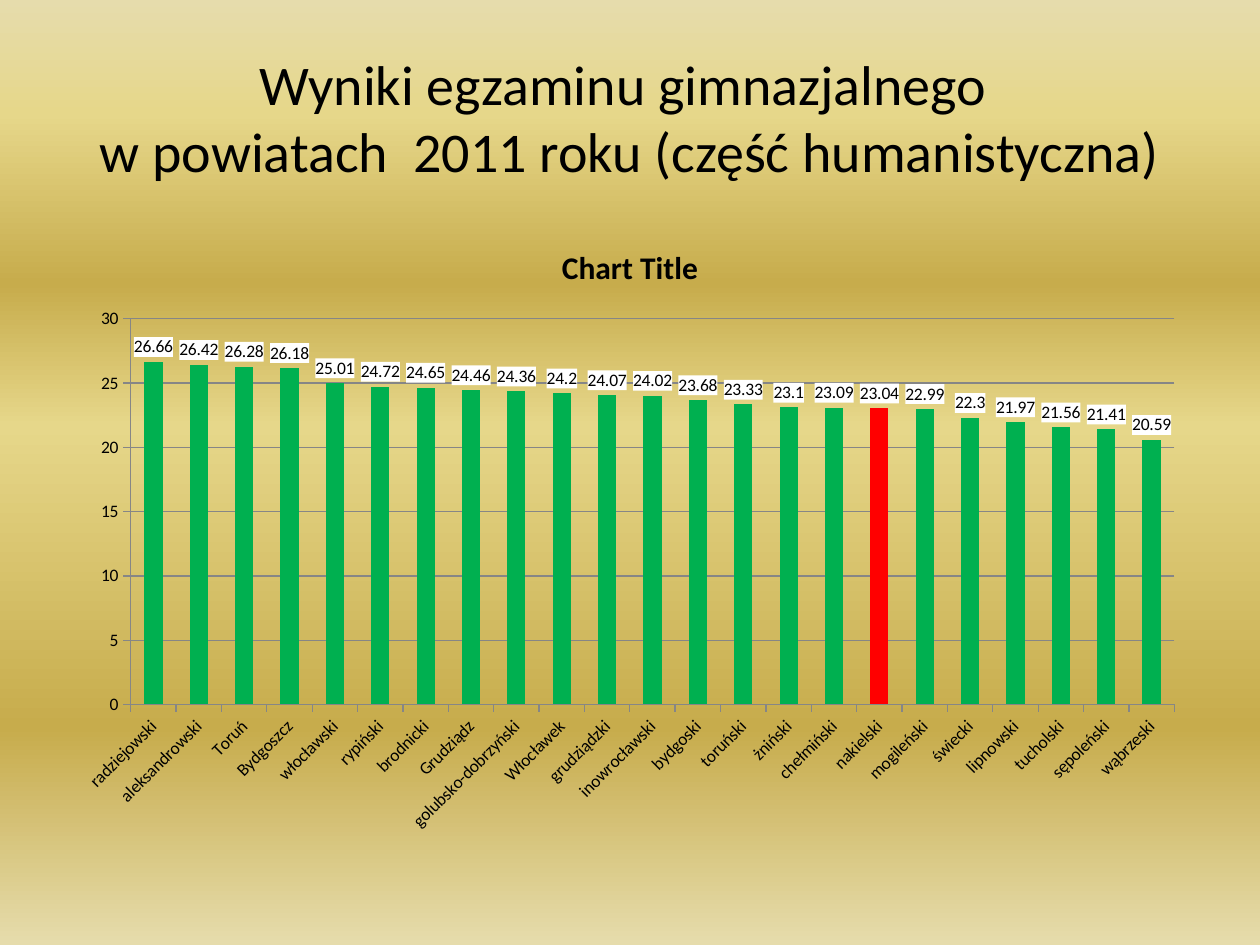
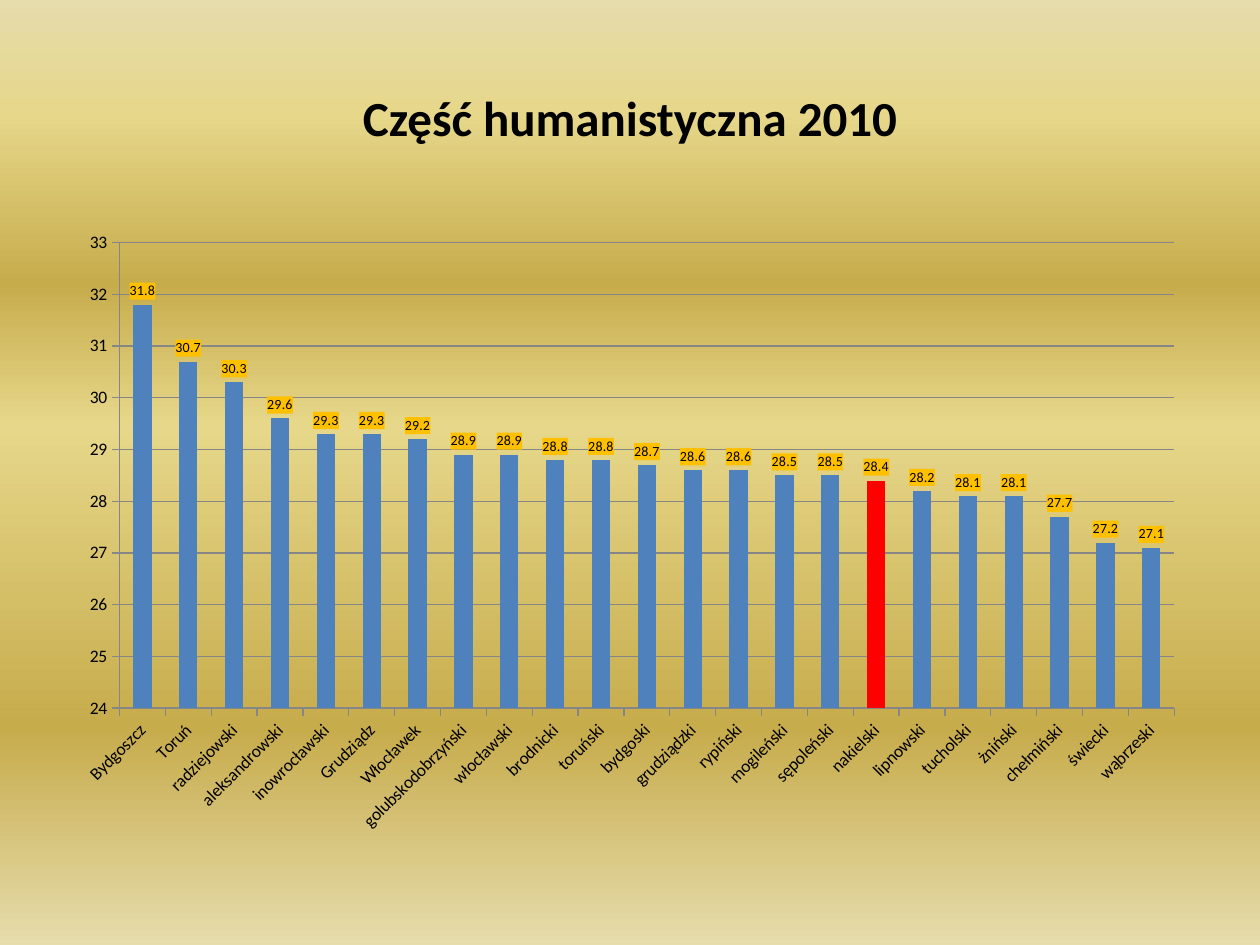
from dataclasses import dataclass
from typing import Optional

from lxml.etree import SubElement
from pptx import Presentation
from pptx.chart.chart import Chart
from pptx.chart.data import CategoryChartData
from pptx.dml.color import RGBColor
from pptx.enum.chart import XL_CHART_TYPE, XL_LABEL_POSITION, XL_TICK_LABEL_POSITION, XL_TICK_MARK
from pptx.enum.text import MSO_ANCHOR, PP_ALIGN
from pptx.oxml import parse_xml
from pptx.oxml.ns import nsdecls, qn
from pptx.presentation import Presentation as Deck
from pptx.slide import Slide
from pptx.util import Cm, Pt


@dataclass(frozen=True)
class Theme:
    font: str = "Calibri"
    text: str = "000000"
    grid: str = "868686"
    highlight: str = "FF0000"
    background: tuple = (
        (0, "E6DCAC"), (12, "E6D78A"), (30, "C7AC4C"),
        (45, "E6D78A"), (77, "C7AC4C"), (100, "E6DCAC"),
    )
    chart_title_size: int = 18
    axis_size: int = 10


@dataclass(frozen=True)
class ResultsPage:
    title: str
    title_size: int
    title_bold: bool
    chart_title: Optional[str]
    bar_color: str
    label_fill: str
    label_size: int
    axis_range: tuple[int, int]
    axis_step: int
    results: dict[str, float]


THEME = Theme()
HIGHLIGHTED_COUNTY = "nakielski"
LEFT, WIDTH = Cm(1.27), Cm(22.86)
TITLE_TOP, TITLE_HEIGHT = Cm(0.76), Cm(3.18)
CHART_TOP, CHART_HEIGHT = Cm(4.44), Cm(12.57)

PAGES = (
    ResultsPage(
        title="Wyniki egzaminu gimnazjalnego \vw powiatach  2011 roku (część humanistyczna)",
        title_size=32,
        title_bold=False,
        chart_title="Chart Title",
        bar_color="00B050",
        label_fill="FFFFFF",
        label_size=10,
        axis_range=(0, 30),
        axis_step=5,
        results={
            "radziejowski": 26.66, "aleksandrowski": 26.42, "Toruń": 26.28,
            "Bydgoszcz": 26.18, "włocławski": 25.01, "rypiński": 24.72,
            "brodnicki": 24.65, "Grudziądz": 24.46, "golubsko-dobrzyński": 24.36,
            "Włocławek": 24.2, "grudziądzki": 24.07, "inowrocławski": 24.02,
            "bydgoski": 23.68, "toruński": 23.33, "żniński": 23.1,
            "chełmiński": 23.09, "nakielski": 23.04, "mogileński": 22.99,
            "świecki": 22.3, "lipnowski": 21.97, "tucholski": 21.56,
            "sępoleński": 21.41, "wąbrzeski": 20.59,
        },
    ),
    ResultsPage(
        title="Część humanistyczna 2010",
        title_size=28,
        title_bold=True,
        chart_title=None,
        bar_color="4F81BD",
        label_fill="FFC000",
        label_size=8,
        axis_range=(24, 33),
        axis_step=1,
        results={
            "Bydgoszcz": 31.8, "Toruń": 30.7, "radziejowski": 30.3,
            "aleksandrowski": 29.6, "inowrocławski": 29.3, "Grudziądz": 29.3,
            "Włocławek": 29.2, "golubskodobrzyński": 28.9, "włocławski": 28.9,
            "brodnicki": 28.8, "toruński": 28.8, "bydgoski": 28.7,
            "grudziądzki": 28.6, "rypiński": 28.6, "mogileński": 28.5,
            "sępoleński": 28.5, "nakielski": 28.4, "lipnowski": 28.2,
            "tucholski": 28.1, "żniński": 28.1, "chełmiński": 27.7,
            "świecki": 27.2, "wąbrzeski": 27.1,
        },
    ),
)


def style_font(font, size: int, bold: bool = False) -> None:
    """Apply the theme's typeface and text colour."""
    font.name = THEME.font
    font.size = Pt(size)
    font.bold = bold
    font.color.rgb = RGBColor.from_string(THEME.text)


def style_line(line) -> None:
    """Draw an axis or grid line in the theme's grey."""
    line.color.rgb = RGBColor.from_string(THEME.grid)
    line.width = Pt(0.75)


def paint_background(deck: Deck) -> None:
    """Give the master a vertical gold gradient."""
    master = deck.slide_master
    fill = master.background.fill
    fill.gradient()
    fill.gradient_angle = 270
    stops = master.element.find(f".//{qn('p:bg')}//{qn('a:gsLst')}")
    for stop in list(stops):
        stops.remove(stop)
    for percent, color in THEME.background:
        stop = SubElement(stops, qn("a:gs"), pos=str(percent * 1000))
        SubElement(stop, qn("a:srgbClr"), val=color)


def add_title(page: Slide, content: ResultsPage) -> None:
    """Add the centred slide title."""
    box = page.shapes.add_textbox(LEFT, TITLE_TOP, WIDTH, TITLE_HEIGHT)
    frame = box.text_frame
    frame.word_wrap = True
    frame.vertical_anchor = MSO_ANCHOR.MIDDLE
    para = frame.paragraphs[0]
    para.text = content.title
    para.alignment = PP_ALIGN.CENTER
    style_font(para.font, content.title_size, content.title_bold)


def style_axes(chart: Chart, content: ResultsPage) -> None:
    """Set the scale, the grid and the slanted county names."""
    value_axis, category_axis = chart.value_axis, chart.category_axis
    value_axis.minimum_scale, value_axis.maximum_scale = content.axis_range
    value_axis.major_unit = content.axis_step
    value_axis.has_major_gridlines = True
    style_line(value_axis.major_gridlines.format.line)
    for axis in (value_axis, category_axis):
        axis.major_tick_mark = XL_TICK_MARK.OUTSIDE
        axis.minor_tick_mark = XL_TICK_MARK.NONE
        axis.tick_label_position = XL_TICK_LABEL_POSITION.NEXT_TO_AXIS
        style_line(axis.format.line)
        style_font(axis.tick_labels.font, THEME.axis_size)
    body = category_axis._element.find(f"{qn('c:txPr')}/{qn('a:bodyPr')}")
    body.set("rot", "-2700000")
    body.set("vert", "horz")


def add_value_labels(chart: Chart, content: ResultsPage) -> None:
    """Show each value above its bar on a filled patch."""
    plot = chart.plots[0]
    plot.has_data_labels = True
    labels = plot.data_labels
    labels.show_value = True
    labels.position = XL_LABEL_POSITION.OUTSIDE_END
    style_font(labels.font, content.label_size)
    patch = parse_xml(
        f"<c:spPr {nsdecls('c', 'a')}><a:solidFill>"
        f'<a:srgbClr val="{content.label_fill}"/></a:solidFill></c:spPr>'
    )
    labels._element.find(qn("c:txPr")).addprevious(patch)


def add_results_chart(page: Slide, content: ResultsPage) -> None:
    """Add the ranked column chart with one county highlighted."""
    counties = list(content.results)
    data = CategoryChartData()
    data.categories = counties
    data.add_series("Series 1", content.results.values())
    chart = page.shapes.add_chart(
        XL_CHART_TYPE.COLUMN_CLUSTERED, LEFT, CHART_TOP, WIDTH, CHART_HEIGHT, data
    ).chart
    style_font(chart.font, THEME.axis_size)
    chart.has_legend = False
    chart.has_title = content.chart_title is not None
    if content.chart_title:
        para = chart.chart_title.text_frame.paragraphs[0]
        para.text = content.chart_title
        style_font(para.font, THEME.chart_title_size, bold=True)
        chart.chart_title.include_in_layout = False
    plot = chart.plots[0]
    plot.gap_width = 150
    plot.vary_by_categories = False
    series = plot.series[0]
    highlighted = series.points[counties.index(HIGHLIGHTED_COUNTY)]
    for bar, color in ((series, content.bar_color), (highlighted, THEME.highlight)):
        bar.format.fill.solid()
        bar.format.fill.fore_color.rgb = RGBColor.from_string(color)
    style_axes(chart, content)
    add_value_labels(chart, content)


def main() -> None:
    """Build and save the deck."""
    deck = Presentation()
    deck.slide_width, deck.slide_height = Cm(25.4), Cm(19.05)
    paint_background(deck)
    for content in PAGES:
        page = deck.slides.add_slide(deck.slide_layouts[6])
        add_title(page, content)
        add_results_chart(page, content)
    deck.save("out.pptx")


if __name__ == "__main__":
    main()
